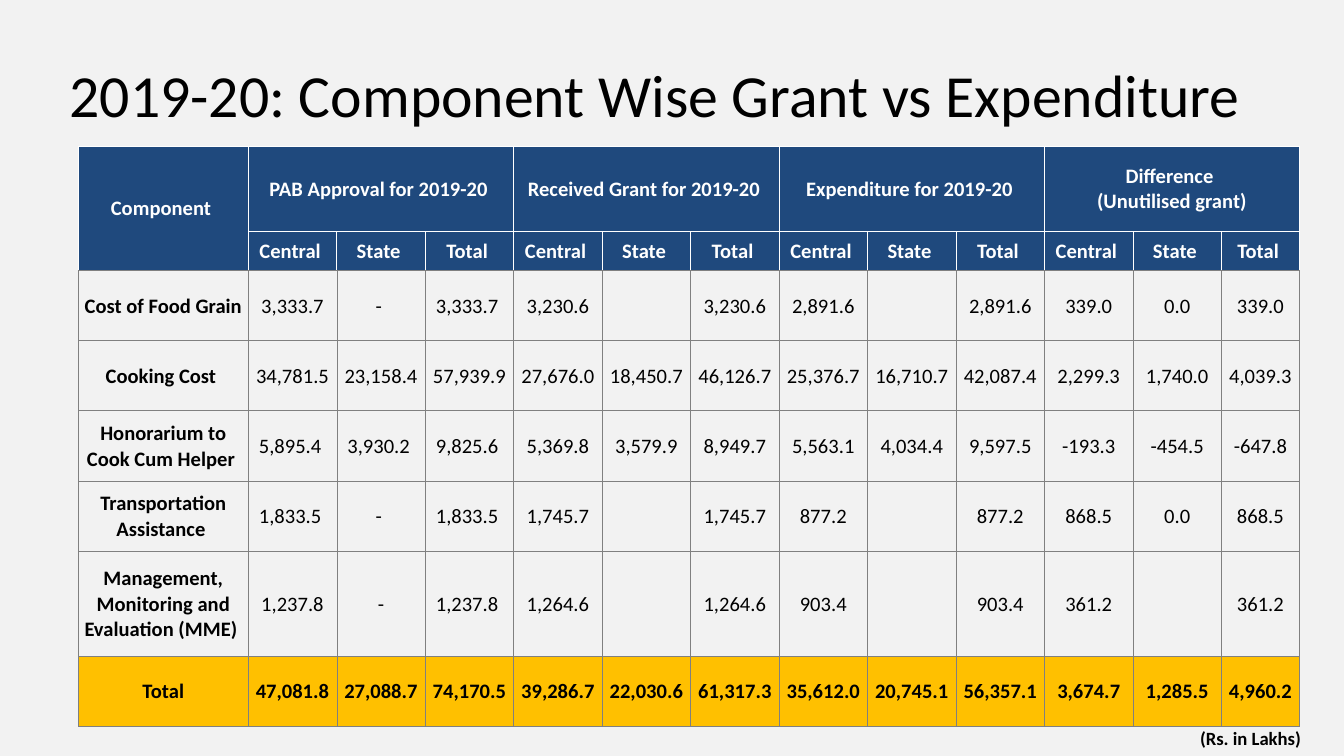
"""Build the 2019-20 component wise grant and expenditure slide."""
from dataclasses import dataclass

from lxml.etree import SubElement
from pptx import Presentation
from pptx.dml.color import RGBColor
from pptx.enum.text import MSO_ANCHOR as Anchor, PP_ALIGN as Align
from pptx.oxml.ns import qn
from pptx.util import Pt

FONT = "Calibri"
PALE = RGBColor(0xF2, 0xF2, 0xF2)
NAVY = RGBColor(0x1F, 0x49, 0x7D)
AMBER = RGBColor(0xFF, 0xC0, 0x00)
GREY = RGBColor(0x80, 0x80, 0x80)
WHITE = RGBColor(0xFF, 0xFF, 0xFF)
BLACK = RGBColor(0x00, 0x00, 0x00)

GROUPS = (
    "PAB Approval for 2019-20 ",
    "Received Grant for 2019-20 ",
    "Expenditure for 2019-20 ",
    "Difference \n(Unutilised grant)",
)
MEASURES = ("Central ", "State ", "Total ")
GROUP_SIZE = len(MEASURES)
HEADER_ROWS = 2
COLUMN_WIDTHS = [91] + [47.4] * 11 + [41.8]


@dataclass(frozen=True)
class Component:
    name: str
    values: str
    height: float = 37.6
    fill: RGBColor = PALE
    bold: bool = False


COMPONENTS = (
    Component("Cost of Food Grain ",
              "3,333.7|- |3,333.7 |3,230.6||3,230.6|2,891.6||2,891.6|339.0|0.0|339.0"),
    Component("Cooking Cost ",
              "34,781.5 |23,158.4 |57,939.9 |27,676.0|18,450.7|46,126.7|"
              "25,376.7|16,710.7|42,087.4|2,299.3|1,740.0|4,039.3"),
    Component("Honorarium to Cook Cum Helper ",
              "5,895.4 |3,930.2 |9,825.6 |5,369.8|3,579.9|8,949.7|"
              "5,563.1|4,034.4|9,597.5|-193.3|-454.5|-647.8"),
    Component("Transportation Assistance ",
              "1,833.5 |- |1,833.5 |1,745.7||1,745.7|877.2||877.2|868.5|0.0|868.5"),
    Component("Management, Monitoring and Evaluation (MME) ",
              "1,237.8|-|1,237.8 |1,264.6||1,264.6|903.4||903.4|361.2||361.2",
              height=56.4),
    Component("Total",
              "47,081.8|27,088.7|74,170.5 |39,286.7|22,030.6|61,317.3|"
              "35,612.0|20,745.1|56,357.1|3,674.7|1,285.5|4,960.2",
              fill=AMBER, bold=True),
)


@dataclass(frozen=True)
class Label:
    text: str
    left: float
    top: float
    width: float
    height: float
    size: float
    bold: bool = False
    anchor: Anchor = Anchor.TOP
    line_spacing: float = 1.0


LABELS = (
    Label("2019-20: Component Wise Grant vs Expenditure", 30.2, 17.3, 642.2, 56.2, 32,
          anchor=Anchor.BOTTOM, line_spacing=0.9),
    Label("(Rs. in Lakhs)", 635.8, 385.9, 106.6, 19.4, 10, bold=True),
)


def apply(target, values: dict) -> None:
    for name, value in values.items():
        setattr(target, name, value)


def style_text(frame, size: float, bold: bool, color: RGBColor, paragraph: dict) -> None:
    for para in frame.paragraphs:
        apply(para, paragraph)
        for span in para.runs:
            apply(span.font, {"name": FONT, "size": Pt(size), "bold": bold})
            span.font.color.rgb = color


def draw_label(page, label: Label) -> None:
    box = page.shapes.add_textbox(
        Pt(label.left), Pt(label.top), Pt(label.width), Pt(label.height))
    frame = box.text_frame
    apply(frame, {"word_wrap": True, "vertical_anchor": label.anchor, "text": label.text})
    style_text(frame, label.size, label.bold, BLACK, {"line_spacing": label.line_spacing})


def set_borders(cell, header: bool, grey_bottom: bool) -> None:
    properties = cell._tc.get_or_add_tcPr()
    for index, side in enumerate(("lnL", "lnR", "lnT", "lnB")):
        white = header and not (side == "lnB" and grey_bottom)
        line = SubElement(properties, qn(f"a:{side}"), w=str(Pt(0.5 if white else 0.25)))
        paint = SubElement(line, qn("a:solidFill"))
        SubElement(paint, qn("a:srgbClr"), val=str(WHITE if white else GREY))
        properties.insert(index, line)


def draw_cell(cell, row: int, column: int, text: str, fill: RGBColor, bold: bool) -> None:
    header = row < HEADER_ROWS
    side = Pt(3 if header or column <= GROUP_SIZE else 0.7)
    top, bottom = (Pt(3.6), Pt(3.6)) if row == 0 else (Pt(0.7), Pt(0))
    apply(cell, {
        "text": text, "vertical_anchor": Anchor.MIDDLE,
        "margin_left": side, "margin_right": side,
        "margin_top": top, "margin_bottom": bottom,
    })
    cell.fill.solid()
    cell.fill.fore_color.rgb = fill
    set_borders(cell, header, grey_bottom=row == 1 or column == 0)
    style_text(cell.text_frame, 11, bold, WHITE if header else BLACK,
               {"alignment": Align.CENTER})


def draw_table(page) -> None:
    group_row = ["Component "]
    for group in GROUPS:
        group_row += [group] + [""] * (GROUP_SIZE - 1)
    measure_row = ["", *MEASURES * len(GROUPS)]
    rows = [group_row, measure_row]
    rows += [[item.name, *item.values.split("|")] for item in COMPONENTS]
    heights = [45.3, 20.2] + [item.height for item in COMPONENTS]
    fills = [NAVY] * HEADER_ROWS + [item.fill for item in COMPONENTS]
    bolds = [True] * HEADER_ROWS + [item.bold for item in COMPONENTS]

    table = page.shapes.add_table(
        len(rows), len(COLUMN_WIDTHS), Pt(42), Pt(78.7),
        Pt(sum(COLUMN_WIDTHS)), Pt(sum(heights))).table
    apply(table, {"first_row": False, "horz_banding": False})
    for column, width in zip(table.columns, COLUMN_WIDTHS):
        column.width = Pt(width)
    for row, texts in enumerate(rows):
        table.rows[row].height = Pt(heights[row])
        for column, text in enumerate(texts):
            draw_cell(table.cell(row, column), row, column, text, fills[row],
                      bolds[row] or column == 0)
    table.cell(0, 0).merge(table.cell(1, 0))
    for first in range(1, len(COLUMN_WIDTHS), GROUP_SIZE):
        table.cell(0, first).merge(table.cell(0, first + GROUP_SIZE - 1))


def main() -> None:
    deck = Presentation()
    apply(deck, {"slide_width": Pt(720), "slide_height": Pt(405)})
    page = deck.slides.add_slide(deck.slide_layouts[6])
    page.background.fill.solid()
    page.background.fill.fore_color.rgb = PALE
    draw_table(page)
    for label in LABELS:
        draw_label(page, label)
    deck.save("out.pptx")


if __name__ == "__main__":
    main()
